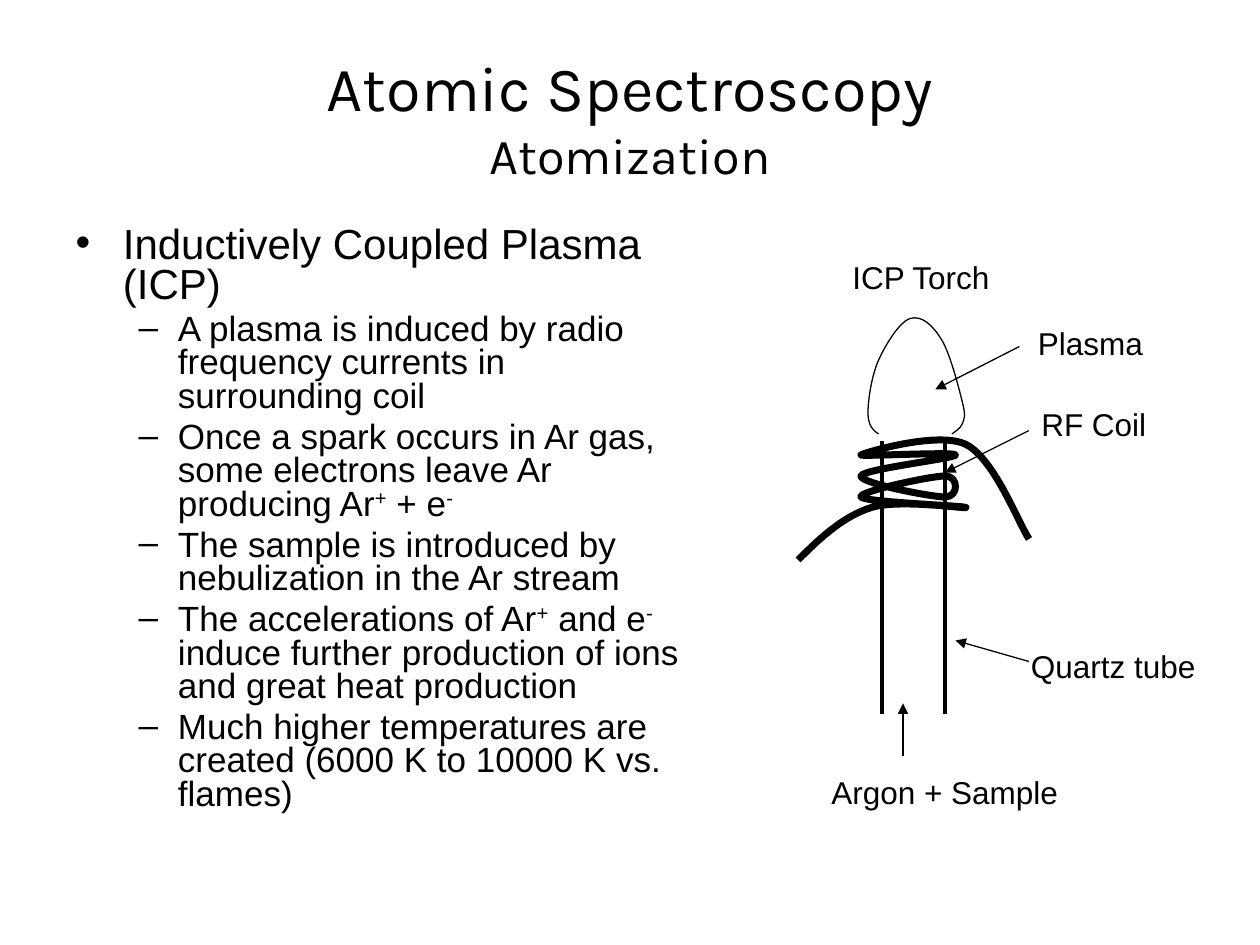
from lxml.etree import SubElement
from pptx import Presentation
from pptx.dml.color import RGBColor
from pptx.enum.shapes import MSO_CONNECTOR
from pptx.enum.text import MSO_ANCHOR, MSO_AUTO_SIZE, PP_ALIGN
from pptx.oxml.ns import qn
from pptx.util import Pt

BLACK = RGBColor(0, 0, 0)
WHITE = RGBColor(255, 255, 255)

BULLETS = [
    (0, [("Inductively Coupled Plasma (ICP)", False)]),
    (1, [("A plasma is induced by radio frequency currents in surrounding coil", False)]),
    (1, [("Once a spark occurs in Ar gas, some electrons leave Ar producing Ar", False),
         ("+", True), (" + e", False), ("-", True)]),
    (1, [("The sample is introduced by nebulization in the Ar stream", False)]),
    (1, [("The accelerations of Ar", False), ("+", True), (" and e", False), ("-", True),
         (" induce further production of ions and great heat production", False)]),
    (1, [("Much higher temperatures are created (6000 K to 10000 K vs. flames)", False)]),
]
LEVELS = [
    {"size": 24, "margin": 27, "indent": -27, "bullet": "•"},
    {"size": 20, "margin": 58.5, "indent": -22.5, "bullet": "–"},
]
TUBE_WALLS = [504, 540]
COIL = [
    (456, 320),
    (469, 307), (482, 295), (498, 290),
    (514, 285), (553, 291), (552, 290),
    (551, 289), (494, 287), (492, 284),
    (490, 281), (532, 272), (540, 272),
    (548, 272), (548, 284), (540, 284),
    (532, 284), (491, 276), (492, 272),
    (493, 268), (546, 262), (546, 260),
    (546, 258), (491, 261), (492, 260),
    (493, 259), (536, 246), (552, 254),
    (568, 262), (582, 299), (588, 308),
]
PLASMA = [
    (502, 248),
    (499, 246), (496, 243), (496, 236),
    (496, 229), (498, 215), (502, 206),
    (506, 197), (514, 184), (520, 182),
    (527, 180), (533, 186), (538, 194),
    (543, 202), (548, 222), (550, 230),
    (552, 238), (551, 239), (550, 242),
    (549, 245), (545, 247), (544, 248),
]


def place(shape, left, top, width, height):
    shape.left, shape.top = Pt(left), Pt(top)
    shape.width, shape.height = Pt(width), Pt(height)


def add_span(para, text, size, font="Arial", raised=False):
    span = para.add_run()
    span.text = text
    span.font.size = Pt(size)
    span.font.name = font
    span.font.color.rgb = BLACK
    if raised:
        span._r.get_or_add_rPr().set("baseline", "30000")


def fill_title(title):
    place(title, 36, 21.6, 648, 90)
    frame = title.text_frame
    frame.auto_size = MSO_AUTO_SIZE.NONE
    frame.vertical_anchor = MSO_ANCHOR.MIDDLE
    para = frame.paragraphs[0]
    para.alignment = PP_ALIGN.CENTER
    add_span(para, "Atomic Spectroscopy", 36, "Karla")
    para.add_line_break()
    add_span(para, "Atomization", 28.8, "Karla")


def fill_body(body):
    place(body, 36, 126, 360, 356.4)
    frame = body.text_frame
    frame.auto_size = MSO_AUTO_SIZE.NONE
    for index, (level, spans) in enumerate(BULLETS):
        para = frame.add_paragraph() if index else frame.paragraphs[0]
        style = LEVELS[level]
        para.level = level
        para.line_spacing = 0.8
        para.space_before = Pt(style["size"] * 0.2)
        properties = para._p.get_or_add_pPr()
        properties.set("marL", str(Pt(style["margin"])))
        properties.set("indent", str(Pt(style["indent"])))
        SubElement(properties, qn("a:buFont"), typeface="Arial")
        SubElement(properties, qn("a:buChar"), char=style["bullet"])
        for text, raised in spans:
            add_span(para, text, style["size"], raised=raised)


def add_label(page, text, left, top, width):
    box = page.shapes.add_textbox(Pt(left), Pt(top), Pt(width), Pt(29))
    box.text_frame.word_wrap = True
    box.text_frame.auto_size = MSO_AUTO_SIZE.SHAPE_TO_FIT_TEXT
    para = box.text_frame.paragraphs[0]
    para.space_before = Pt(9)
    add_span(para, text, 18)


def add_line(page, start, end, weight):
    line = page.shapes.add_connector(
        MSO_CONNECTOR.STRAIGHT, *(Pt(value) for value in start + end))
    line.line.color.rgb = BLACK
    line.line.width = Pt(weight)
    SubElement(line._element.spPr, qn("a:effectLst"))
    return line


def add_pointer(page, start, end):
    pointer = add_line(page, start, end, 0.75)
    SubElement(pointer.line._get_or_add_ln(), qn("a:tailEnd"), type="triangle")


def add_curve(page, points, weight):
    start, *others = points
    builder = page.shapes.build_freeform(*start, scale=Pt(1))
    builder.add_line_segments(others, close=False)
    curve = builder.convert_to_shape()
    curve.fill.background()
    curve.line.color.rgb = BLACK
    curve.line.width = Pt(weight)
    curve.shadow.inherit = False
    outline = next(curve._element.iter(qn("a:path")))
    segments = outline.findall(qn("a:lnTo"))
    for first in range(0, len(segments), 3):
        bezier = SubElement(outline, qn("a:cubicBezTo"))
        for segment in segments[first:first + 3]:
            bezier.append(segment[0])
            outline.remove(segment)


def main():
    deck = Presentation()
    deck.slide_width, deck.slide_height = Pt(720), Pt(540)
    page = deck.slides.add_slide(deck.slide_layouts[1])
    page.background.fill.solid()
    page.background.fill.fore_color.rgb = WHITE
    fill_title(page.shapes.title)
    fill_body(page.placeholders[1])
    for wall in TUBE_WALLS:
        add_line(page, (wall, 408), (wall, 252), 2)
    add_curve(page, COIL, 4)
    add_label(page, "ICP Torch", 480, 144, 138)
    add_label(page, "Quartz tube", 582, 366, 114)
    add_pointer(page, (588, 378), (546, 366))
    add_label(page, "Argon + Sample", 468, 438, 144)
    add_pointer(page, (516, 432), (516, 402))
    add_label(page, "RF Coil", 588, 228, 108)
    add_pointer(page, (588, 246), (540, 270))
    add_curve(page, PLASMA, 0.75)
    add_label(page, "Plasma", 586, 181.5, 108)
    add_pointer(page, (582.5, 198), (534.5, 222.5))
    deck.save("out.pptx")


if __name__ == "__main__":
    main()
